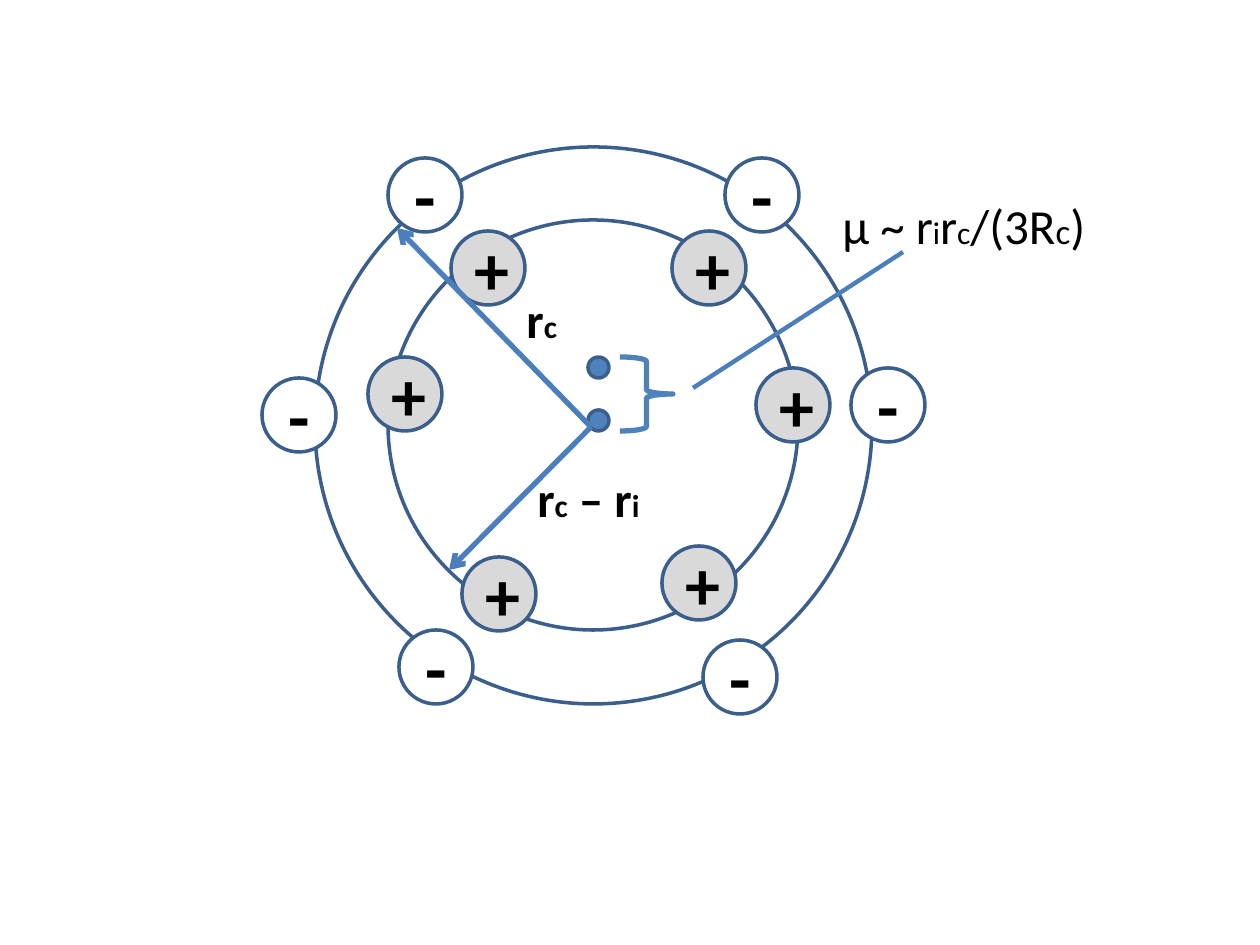
from lxml.etree import SubElement
from pptx import Presentation
from pptx.dml.color import RGBColor
from pptx.enum.shapes import MSO_CONNECTOR, MSO_SHAPE
from pptx.enum.text import MSO_ANCHOR, MSO_AUTO_SIZE, PP_ALIGN
from pptx.oxml.ns import qn
from pptx.util import Pt

EMU_PER_PX = 914400 / 126
FONT = "Calibri"
BLACK = RGBColor(0x00, 0x00, 0x00)
WHITE = RGBColor(0xFF, 0xFF, 0xFF)
GRAY = RGBColor(0xD9, 0xD9, 0xD9)
BLUE = RGBColor(0x4F, 0x81, 0xBD)
OUTLINE_BLUE = RGBColor(0x3A, 0x5F, 0x8C)
LINE_BLUE = RGBColor(0x4B, 0x7E, 0xBC)

CHARGE_SIZE = 74
DOT_SIZE = 21
NEGATIVE_CHARGES = [(725, 158), (262, 378), (851, 368), (703, 640), (399, 630), (388, 158)]
POSITIVE_CHARGES = [(662, 546), (462, 557), (672, 231), (451, 231), (368, 357), (756, 368)]
CENTER = (591, 427)


def px(*lengths):
    """Convert pixel lengths to a list of EMU lengths."""
    return [round(length * EMU_PER_PX) for length in lengths]


def format_run(run, size, bold):
    """Apply the slide font to one run."""
    run.font.name = FONT
    run.font.size = Pt(size)
    run.font.bold = bold
    run.font.color.rgb = BLACK


def add_outlined_shape(slide, kind, box, line_color, line_width, fill_color=None):
    """Add a preset shape with an outline and an optional fill."""
    shape = slide.shapes.add_shape(kind, *px(*box))
    shape.shadow.inherit = False
    shape.line.color.rgb = line_color
    shape.line.width = Pt(line_width)
    if fill_color is None:
        shape.fill.background()
    else:
        shape.fill.solid()
        shape.fill.fore_color.rgb = fill_color
    return shape


def add_circle(slide, left, top, size, fill_color=None):
    """Add a circle with the dark blue outline."""
    box = (left, top, size, size)
    return add_outlined_shape(slide, MSO_SHAPE.OVAL, box, OUTLINE_BLUE, 2, fill_color)


def add_charges(slide, positions, sign, fill_color):
    """Add one signed circle at each position."""
    for left, top in positions:
        text_frame = add_circle(slide, left, top, CHARGE_SIZE, fill_color).text_frame
        text_frame.vertical_anchor = MSO_ANCHOR.MIDDLE
        text_frame.text = sign
        paragraph = text_frame.paragraphs[0]
        paragraph.alignment = PP_ALIGN.CENTER
        format_run(paragraph.runs[0], 40, True)


def add_line(slide, start, end, width, arrow=False):
    """Add a straight line, with an open arrowhead at its end if asked."""
    connector = slide.shapes.add_connector(MSO_CONNECTOR.STRAIGHT, *px(*start, *end))
    connector.line.color.rgb = LINE_BLUE
    connector.line.width = Pt(width)
    if arrow:
        SubElement(connector.line._get_or_add_ln(), qn("a:tailEnd"), type="arrow")
    SubElement(connector._element.spPr, qn("a:effectLst"))


def add_label(slide, left, top, width, parts, bold=False):
    """Add a text box made of (text, point size) parts."""
    text_frame = slide.shapes.add_textbox(*px(left, top, width, 72)).text_frame
    text_frame.word_wrap = True
    text_frame.auto_size = MSO_AUTO_SIZE.SHAPE_TO_FIT_TEXT
    for text, size in parts:
        run = text_frame.paragraphs[0].add_run()
        run.text = text
        format_run(run, size, bold)


def main():
    """Build the charge shell diagram and save it."""
    presentation = Presentation()
    presentation.slide_width, presentation.slide_height = px(1260, 945)
    slide = presentation.slides.add_slide(presentation.slide_layouts[6])

    add_circle(slide, 315, 147, 557)
    add_circle(slide, 388, 220, 410)
    add_charges(slide, NEGATIVE_CHARGES, "-", WHITE)
    add_charges(slide, POSITIVE_CHARGES, "+", GRAY)
    for top in (357, 410):
        add_circle(slide, 588, top, DOT_SIZE, BLUE)
    add_outlined_shape(slide, MSO_SHAPE.RIGHT_BRACE, (620, 357, 53, 74), BLUE, 3)

    add_line(slide, (693, 388), (903, 252), 2.5)
    for tip in ((397, 228), (449, 570)):
        add_line(slide, CENTER, tip, 3, arrow=True)

    add_label(slide, 525, 462, 136, [("r", 28), ("c", 18), (" – r", 28), ("i", 18)], bold=True)
    add_label(slide, 514, 283, 74, [("r", 28), ("c", 18)], bold=True)
    formula = [("μ ~ r", 28), ("i", 18), ("r", 28), ("c", 18), ("/(3R", 28), ("c", 20), (")", 28)]
    add_label(slide, 830, 189, 284, formula)
    presentation.save("out.pptx")


if __name__ == "__main__":
    main()
